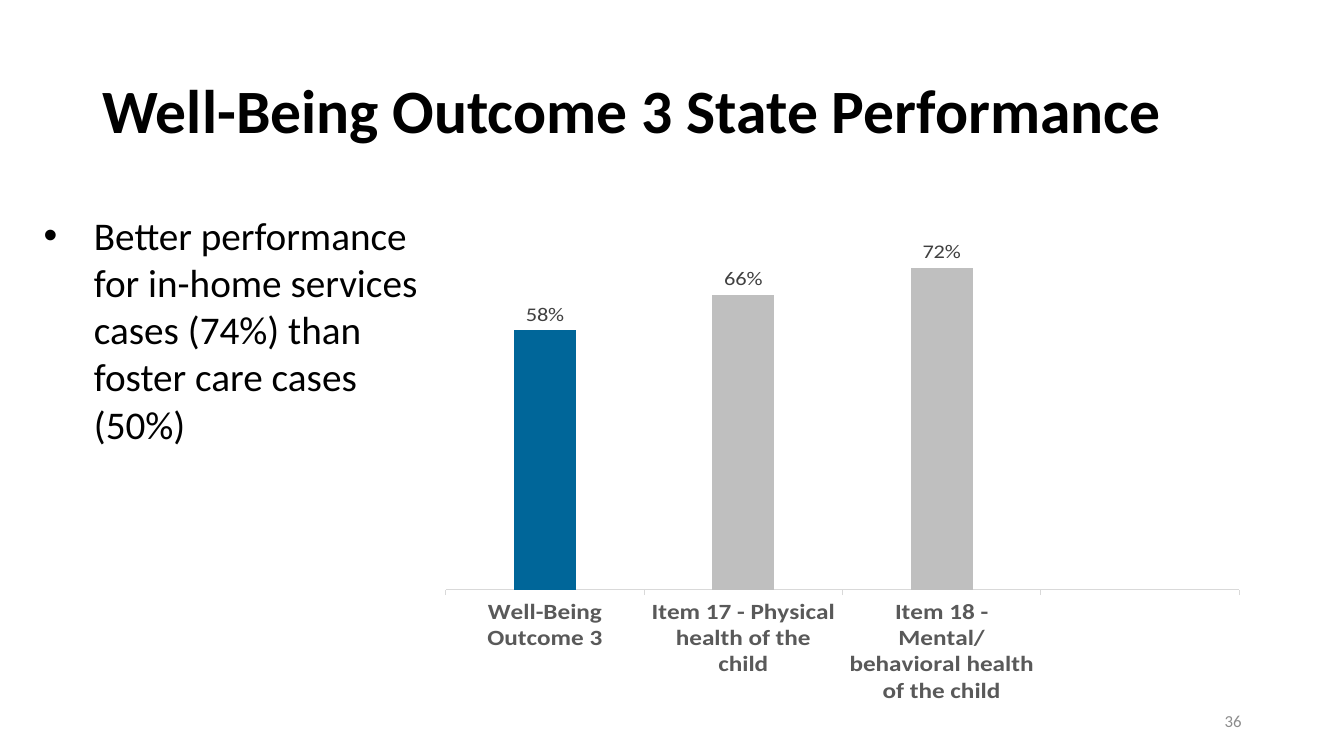
import pptx
import pptx.chart.data
import pptx.dml.color
import pptx.enum.chart
import pptx.enum.text
import pptx.oxml
import pptx.oxml.ns
import pptx.util

RGBColor = pptx.dml.color.RGBColor
BLACK = RGBColor(0x00, 0x00, 0x00)
BLUE = RGBColor(0x00, 0x66, 0x99)
SILVER = RGBColor(0xBF, 0xBF, 0xBF)
AXIS_GRAY = RGBColor(0xD9, 0xD9, 0xD9)
CATEGORY_GRAY = RGBColor(0x59, 0x59, 0x59)
LABEL_GRAY = RGBColor(0x40, 0x40, 0x40)
NUMBER_GRAY = RGBColor(0x8C, 0x8C, 0x8C)

WIDTH, HEIGHT = pptx.util.Inches(13.33), pptx.util.Inches(7.5)
COLUMNS, ROWS = 40, 30
PLOT_AREA = {"x": 0.017, "y": 0.157, "w": 0.939, "h": 0.762}

PERFORMANCE = [
    ("Well-Being Outcome 3", 0.58, BLUE),
    ("Item 17 - Physical health of the child", 0.66, SILVER),
    ("Item 18 - Mental/behavioral health of the child", 0.72, SILVER),
    ("", None, None),
]


def format_font(font, size, color=BLACK, bold=False, name="Calibri"):
    font.name = name
    font.size = pptx.util.Pt(size)
    font.bold = bold
    font.color.rgb = color


def write_text(para, text, align=None, spacing=None, **font_format):
    para.alignment = align
    para.line_spacing = spacing
    span = para.add_run()
    span.text = text
    format_font(span.font, **font_format)


def add_bullet(para, indent):
    properties = para._p.get_or_add_pPr()
    properties.set("marL", str(indent))
    properties.set("indent", str(-indent))
    namespace = pptx.oxml.ns.nsdecls("a")
    properties.append(pptx.oxml.parse_xml(f'<a:buFont {namespace} typeface="Arial"/>'))
    properties.append(pptx.oxml.parse_xml(f'<a:buChar {namespace} char="•"/>'))


def fix_plot_area(chart):
    """Pin the inner plot area to its shares of the chart frame."""
    modes = "".join(f'<c:{side}Mode val="edge"/>' for side in "xy")
    shares = "".join(f'<c:{key} val="{share}"/>' for key, share in PLOT_AREA.items())
    layout = pptx.oxml.parse_xml(
        f'<c:layout {pptx.oxml.ns.nsdecls("c")}><c:manualLayout>'
        f'<c:layoutTarget val="inner"/>{modes}{shares}</c:manualLayout></c:layout>')
    plot_area = chart._chartSpace.chart.plotArea
    for previous in plot_area.findall(pptx.oxml.ns.qn("c:layout")):
        plot_area.remove(previous)
    plot_area.insert(0, layout)


class SlideBuilder:
    """Places elements on a grid of COLUMNS by ROWS."""

    def __init__(self, deck):
        self.page = deck.slides.add_slide(deck.slide_layouts[6])

    def frame(self, column, row, columns, rows):
        return (round(WIDTH * column / COLUMNS), round(HEIGHT * row / ROWS),
                round(WIDTH * columns / COLUMNS), round(HEIGHT * rows / ROWS))

    def text(self, cells, text, anchor=pptx.enum.text.MSO_ANCHOR.MIDDLE,
             bullet_indent=None, **text_format):
        box = self.page.shapes.add_textbox(*self.frame(*cells))
        box.text_frame.word_wrap = True
        box.text_frame.vertical_anchor = anchor
        para = box.text_frame.paragraphs[0]
        write_text(para, text, **text_format)
        if bullet_indent:
            add_bullet(para, bullet_indent)

    def column_chart(self, cells, rows):
        categories, values, colors = zip(*rows)
        data = pptx.chart.data.CategoryChartData(number_format="0%")
        data.categories = categories
        data.add_series("Series 1", values)
        chart = self.page.shapes.add_chart(
            pptx.enum.chart.XL_CHART_TYPE.COLUMN_CLUSTERED,
            *self.frame(*cells), data).chart
        chart.has_legend = False
        chart.has_title = False
        format_font(chart.font, 10)
        fix_plot_area(chart)
        self.style_axes(chart)
        self.style_columns(chart.plots[0], colors)

    def style_axes(self, chart):
        axis = chart.category_axis
        axis.major_tick_mark = pptx.enum.chart.XL_TICK_MARK.OUTSIDE
        axis.format.line.color.rgb = AXIS_GRAY
        axis.format.line.width = pptx.util.Pt(0.75)
        format_font(axis.tick_labels.font, 18, CATEGORY_GRAY, bold=True)
        scale = chart.value_axis
        scale.minimum_scale, scale.maximum_scale = 0, 0.8
        scale.has_major_gridlines = False
        scale.visible = False

    def style_columns(self, plot, colors):
        plot.gap_width, plot.overlap = 219, -27
        plot.vary_by_categories = False
        series = plot.series[0]
        for index, color in enumerate(colors):
            if color is not None:
                fill = series.points[index].format.fill
                fill.solid()
                fill.fore_color.rgb = color
        labels = series.data_labels
        labels.show_value = True
        labels.number_format, labels.number_format_is_linked = "0%", False
        labels.position = pptx.enum.chart.XL_LABEL_POSITION.OUTSIDE_END
        format_font(labels.font, 16, LABEL_GRAY)


def main():
    deck = pptx.Presentation()
    deck.slide_width, deck.slide_height = WIDTH, HEIGHT
    slide = SlideBuilder(deck)
    slide.text((2.75, 1.6, 34.5, 5.8), "Well-Being Outcome 3 State Performance",
               size=44, bold=True, spacing=0.9)
    slide.column_chart((12.84, 6.28, 25.15, 21.64), PERFORMANCE)
    slide.text((28.25, 27.8, 9, 1.6), "36", size=12, color=NUMBER_GRAY,
               align=pptx.enum.text.PP_ALIGN.RIGHT)
    slide.text((1, 8.2, 12.42, 9.84),
               "Better performance for in-home services cases (74%) "
               "than foster care cases (50%)",
               anchor=pptx.enum.text.MSO_ANCHOR.TOP,
               bullet_indent=pptx.util.Inches(0.5), size=28)
    deck.save("out.pptx")


if __name__ == "__main__":
    main()
